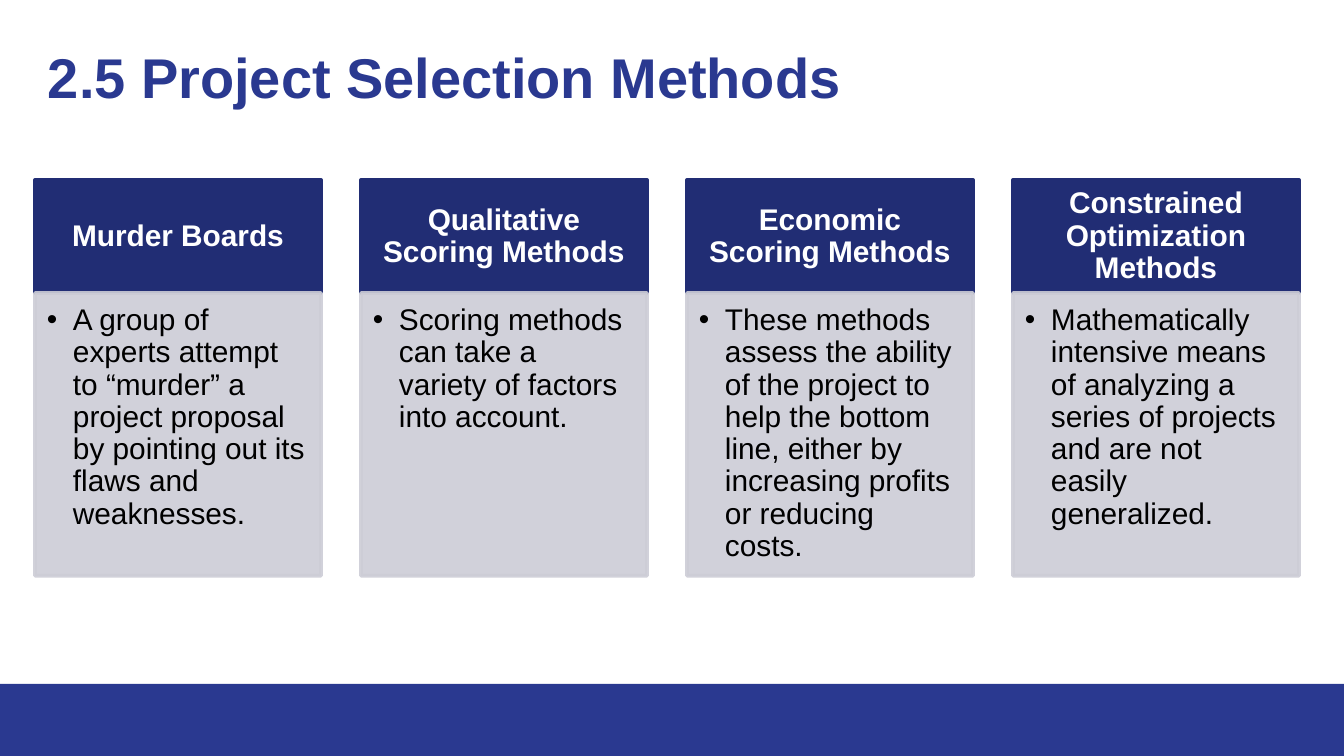
"""Build the project selection methods slide with four headed columns."""
from lxml import etree
from pptx import Presentation
from pptx.dml.color import RGBColor
from pptx.enum.shapes import MSO_SHAPE
from pptx.enum.text import MSO_ANCHOR, PP_ALIGN
from pptx.oxml.ns import qn
from pptx.util import Pt

RECT = MSO_SHAPE.RECTANGLE
TOP, MIDDLE = MSO_ANCHOR.TOP, MSO_ANCHOR.MIDDLE
LEFT, CENTER = PP_ALIGN.LEFT, PP_ALIGN.CENTER
PX = 914400 / 134.4
BLUE, NAVY, GREY = "2A3990", "212D74", "CDCDD6"


def add_box(x, y, w, h, color, line=0):
    sp = s.shapes.add_shape(RECT, *[round(v * PX) for v in (x, y, w, h)])
    sp.shadow.inherit = False
    sp.fill.solid()
    sp.fill.fore_color.rgb = RGBColor.from_string(color)
    if line:
        sp.line.color.rgb = RGBColor.from_string(color)
        sp.line.width = Pt(line)
    else:
        sp.line.fill.background()
    return sp


def add_text(sp, text, size=16, color="000000", bold=False, align=LEFT,
             anchor=TOP, insets=(13, 13, 13, 13), spacing=1.0):
    tf = sp.text_frame
    tf.word_wrap = True
    tf.vertical_anchor = anchor
    tf.margin_left, tf.margin_top, tf.margin_right, tf.margin_bottom = [
        round(v * PX) for v in insets]
    p = tf.paragraphs[0]
    p.alignment = align
    p.line_spacing = spacing
    r = p.add_run()
    r.text = text
    r.font.name = "Arial"
    r.font.size = Pt(size)
    r.font.bold = bold
    r.font.color.rgb = RGBColor.from_string(color)
    return p


prs = Presentation()
prs.slide_width, prs.slide_height = round(1344 * PX), round(756 * PX)
s = prs.slides.add_slide(prs.slide_layouts[6])

add_box(0, 684, 1344, 72, BLUE)
title = s.shapes.add_textbox(*[round(v * PX) for v in (35, 30, 1288, 89)])
add_text(title, "2.5 Project Selection Methods", size=30, color=BLUE, bold=True)

methods = [
    ("Murder Boards",
     "A group of experts attempt to “murder” a project proposal by pointing out "
     "its flaws and weaknesses."),
    ("Qualitative Scoring Methods",
     "Scoring methods can take a variety of factors into account."),
    ("Economic Scoring Methods",
     "These methods assess the ability of the project to help the bottom line, "
     "either by increasing profits or reducing costs."),
    ("Constrained Optimization Methods",
     "Mathematically intensive means of analyzing a series of projects and are "
     "not easily generalized."),
]

for i, (heading, description) in enumerate(methods):
    x = 35 + i * 326
    header = add_box(x, 180, 286, 113, NAVY, line=2)
    add_text(header, heading, color="FFFFFF", bold=True, align=CENTER,
             anchor=MIDDLE, insets=(16, 9, 16, 9), spacing=0.9)

    body = add_box(x, 293, 286, 283, GREY, line=2)
    for clr in body._element.spPr.iter(qn("a:srgbClr")):
        etree.SubElement(clr, qn("a:alpha"), val="90000")
    p = add_text(body, description, insets=(12, 12, 16, 19), spacing=0.9)
    p.level = 1
    pPr = p._p.get_or_add_pPr()
    pPr.set("marL", str(round(26 * PX)))
    pPr.set("indent", str(round(-26 * PX)))
    etree.SubElement(pPr, qn("a:buFont"), typeface="Arial")
    etree.SubElement(pPr, qn("a:buChar"), char="•")

prs.save("out.pptx")
